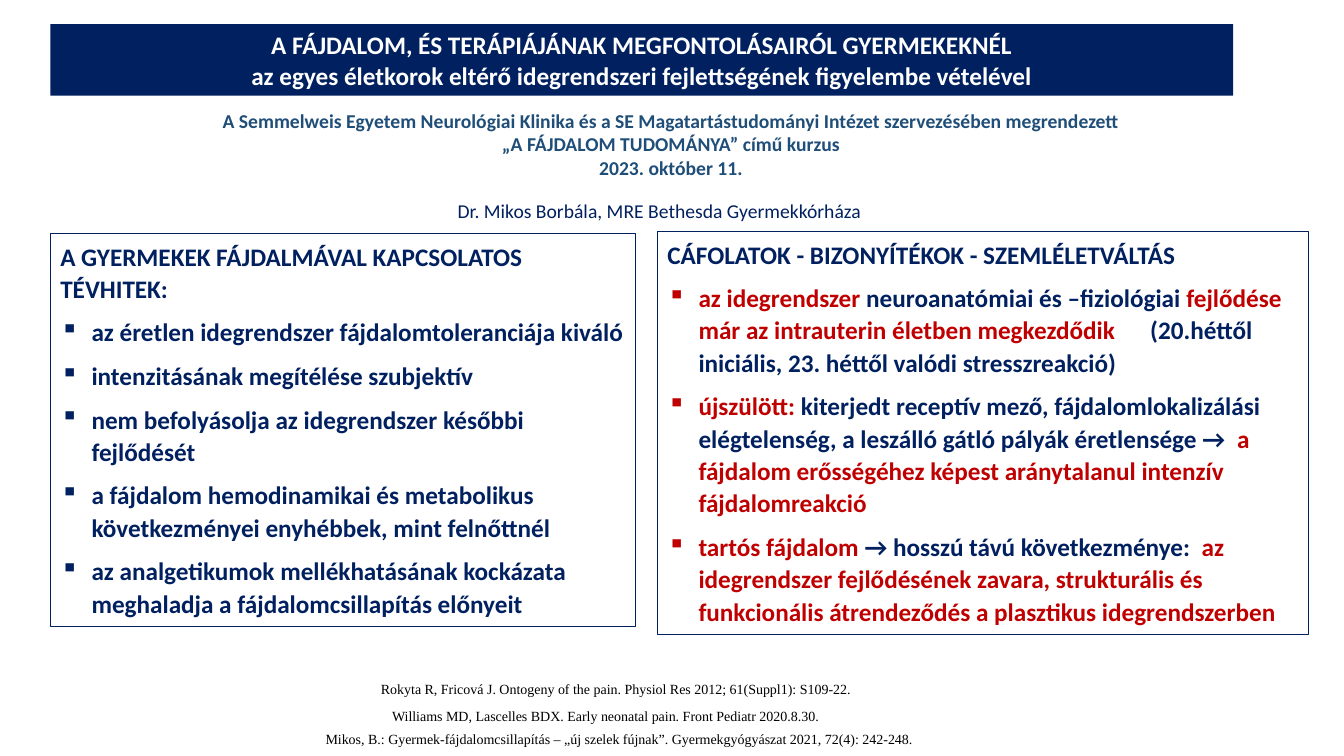
import pptx
import pptx.util
import pptx.dml.color
import pptx.enum.shapes
import pptx.enum.text
from lxml import etree

Inches, Pt = pptx.util.Inches, pptx.util.Pt
RGBColor = pptx.dml.color.RGBColor
PP_ALIGN = pptx.enum.text.PP_ALIGN

NAVY = RGBColor(0x00, 0x20, 0x60)
RED = RGBColor(0xC0, 0x00, 0x00)
BLUE = RGBColor(0x1F, 0x4E, 0x79)
WHITE = RGBColor(0xFF, 0xFF, 0xFF)
BLACK = RGBColor(0x00, 0x00, 0x00)

# Content: each line is a list of (text, colour) runs
TITLE = ["A FÁJDALOM, ÉS TERÁPIÁJÁNAK MEGFONTOLÁSAIRÓL GYERMEKEKNÉL",
         "az egyes életkorok eltérő idegrendszeri fejlettségének figyelembe vételével"]
COURSE = ["A Semmelweis Egyetem Neurológiai Klinika és a SE Magatartástudományi Intézet szervezésében megrendezett",
          "„A FÁJDALOM TUDOMÁNYA” című kurzus",
          "2023. október 11."]
AUTHOR = "Dr. Mikos Borbála, MRE Bethesda Gyermekkórháza"
MYTHS = [
    [("A GYERMEKEK FÁJDALMÁVAL KAPCSOLATOS TÉVHITEK:", NAVY)],
    [("az éretlen idegrendszer fájdalomtoleranciája kiváló", NAVY)],
    [("intenzitásának megítélése szubjektív", NAVY)],
    [("nem befolyásolja az idegrendszer későbbi fejlődését", NAVY)],
    [("a fájdalom hemodinamikai és metabolikus következményei enyhébbek, mint felnőttnél", NAVY)],
    [("az analgetikumok mellékhatásának kockázata meghaladja a fájdalomcsillapítás előnyeit", NAVY)],
]
FACTS = [
    [("CÁFOLATOK - BIZONYÍTÉKOK - SZEMLÉLETVÁLTÁS", NAVY)],
    [("az idegrendszer ", RED), ("neuroanatómiai és –fiziológiai ", NAVY),
     ("fejlődése már az intrauterin életben megkezdődik\t", RED),
     ("(20.héttől iniciális, 23. héttől valódi stresszreakció)", NAVY)],
    [("újszülött:", RED),
     (" kiterjedt receptív mező, fájdalomlokalizálási elégtelenség, "
      "a leszálló gátló pályák éretlensége →  ", NAVY),
     ("a fájdalom erősségéhez képest aránytalanul intenzív fájdalomreakció", RED)],
    [("tartós fájdalom ", RED), ("→ hosszú távú következménye:  ", NAVY),
     ("az idegrendszer fejlődésének zavara, strukturális és funkcionális "
      "átrendeződés a plasztikus idegrendszerben", RED)],
]
# (left, top, width, text)
REFERENCES = [
    (3.68, 6.7, 6.67, "Rokyta R, Fricová J. Ontogeny of the pain. Physiol Res 2012; 61(Suppl1): S109-22."),
    (3.79, 6.97, 6.67, "Williams MD, Lascelles BDX. Early neonatal pain. Front Pediatr 2020.8.30."),
    (3.13, 7.2, 7.65, "Mikos, B.: Gyermek-fájdalomcsillapítás – „új szelek fújnak”. "
                      "Gyermekgyógyászat 2021, 72(4): 242-248."),
]
BULLET_INDENT = 0.31
TAB_STOP = 4.79

prs = pptx.Presentation()
prs.slide_width, prs.slide_height = Inches(13.33), Inches(7.5)
s = prs.slides.add_slide(prs.slide_layouts[6])


def style(r, size, color, bold=False, font="Calibri"):
    r.font.size, r.font.bold, r.font.name = Pt(size), bold, font
    r.font.color.rgb = color


def fill_text(sp, lines, size, color, bold=False, align=PP_ALIGN.LEFT, font="Calibri"):
    tf = sp.text_frame
    tf.word_wrap = True
    tf.text = "\n".join(lines)
    for p in tf.paragraphs:
        p.alignment = align
        style(p.runs[0], size, color, bold, font)


def add_text(box, *args, **kwargs):
    fill_text(s.shapes.add_textbox(*map(Inches, box)), *args, **kwargs)


def add_rect(box):
    sp = s.shapes.add_shape(pptx.enum.shapes.MSO_SHAPE.RECTANGLE, *map(Inches, box))
    sp.shadow.inherit = False
    return sp


def add_bullet(p):
    pPr = p._p.get_or_add_pPr()
    pPr.set("marL", str(Inches(BULLET_INDENT)))
    pPr.set("indent", str(-Inches(BULLET_INDENT)))
    ns = "{%s}" % pPr.nsmap["a"]
    etree.SubElement(pPr, ns + "buChar", char="▪")
    tabs = etree.SubElement(pPr, ns + "tabLst")
    etree.SubElement(tabs, ns + "tab", pos=str(Inches(TAB_STOP)), algn="l")


def add_panel(box, lines):
    sp = add_rect(box)
    sp.fill.background()
    sp.line.color.rgb, sp.line.width = NAVY, Pt(0.75)
    tf = sp.text_frame
    tf.word_wrap = True
    tf.vertical_anchor = pptx.enum.text.MSO_ANCHOR.TOP
    for i, runs in enumerate(lines):
        p = tf.add_paragraph() if i else tf.paragraphs[0]
        p.alignment, p.line_spacing, p.space_after = PP_ALIGN.LEFT, 1.07, Pt(8)
        if i:
            add_bullet(p)
        for text, color in runs:
            r = p.add_run()
            r.text = text
            style(r, 18, color, True)


# Myths and refutations
add_panel((0.5, 2.32, 5.8, 3.9), MYTHS)
add_panel((6.52, 2.3, 6.46, 4), FACTS)

# References
for left, top, width, text in REFERENCES:
    add_text((left, top, width, 0.27), [text], 10, BLACK, font="Times New Roman")

# Author, title band and course
add_text((4.44, 1.92, 6.52, 0.34), [AUTHOR], 14, NAVY)
band = add_rect((0.5, 0.24, 11.73, 0.71))
band.fill.solid()
band.fill.fore_color.rgb = NAVY
band.line.fill.background()
fill_text(band, TITLE, 18, WHITE, True, PP_ALIGN.CENTER)
add_text((0.33, 1.03, 12.65, 0.8), COURSE, 14, BLUE, True, PP_ALIGN.CENTER)

prs.save("out.pptx")
